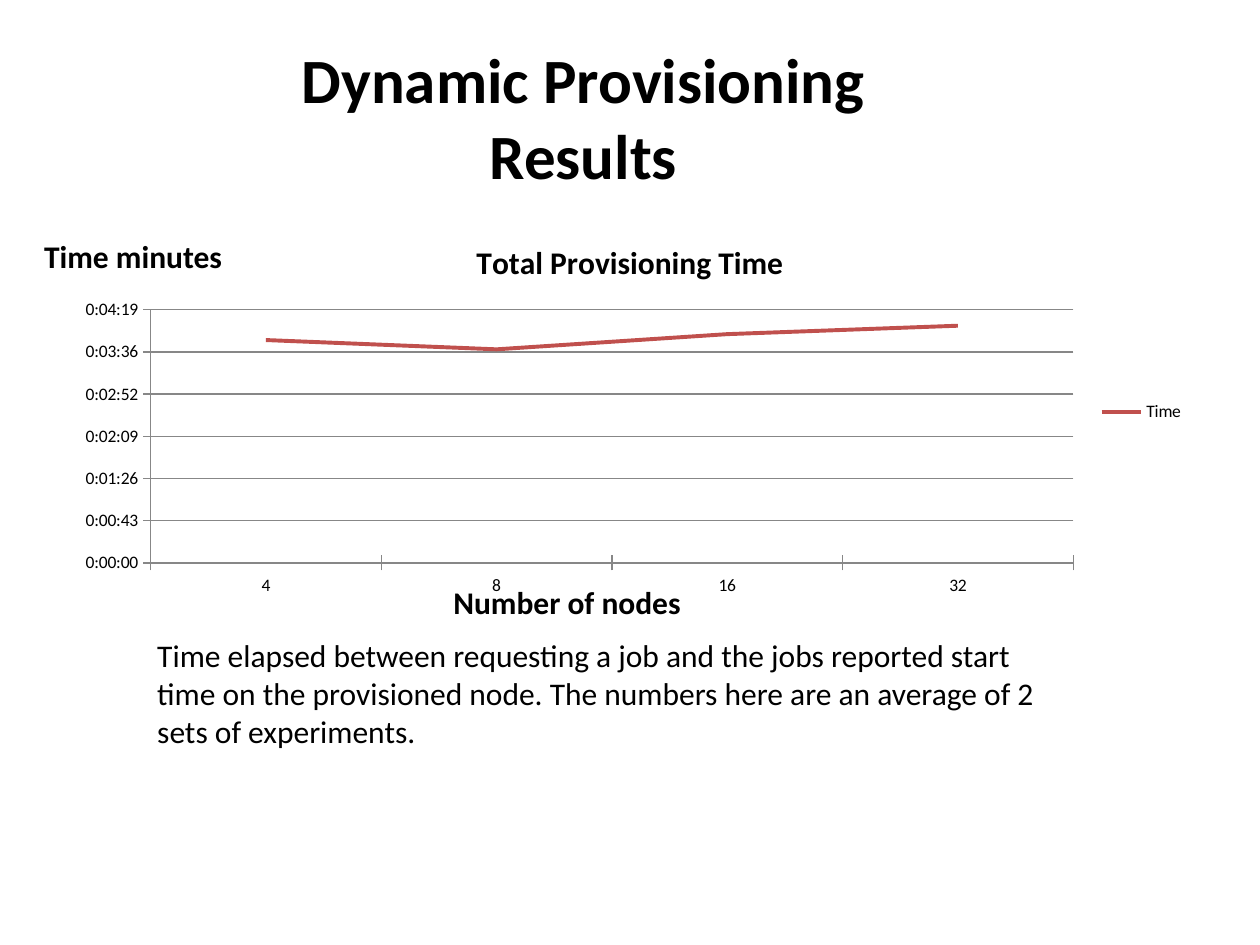
from pptx import Presentation
from pptx.chart.data import CategoryChartData
from pptx.dml.color import RGBColor
from pptx.enum.chart import XL_CHART_TYPE, XL_LEGEND_POSITION, XL_TICK_MARK
from pptx.enum.text import MSO_ANCHOR, MSO_AUTO_SIZE, PP_ALIGN
from pptx.util import Cm, Pt

LINE = XL_CHART_TYPE.LINE_STACKED
RIGHT = XL_LEGEND_POSITION.RIGHT
CROSS = XL_TICK_MARK.CROSS
MIDDLE = MSO_ANCHOR.MIDDLE
GROW = MSO_AUTO_SIZE.SHAPE_TO_FIT_TEXT
FIXED = MSO_AUTO_SIZE.NONE
CENTER = PP_ALIGN.CENTER

FONT = "Calibri"
BLACK = "000000"
GRAY = "878787"
RED = "C0504D"


def paint(color, value):
    color.rgb = RGBColor.from_string(value)


def style(font, size, bold=False):
    font.name = FONT
    font.size = Pt(size)
    font.bold = bold
    paint(font.color, BLACK)


def add_title(slide, text):
    title = slide.shapes.title
    title.left, title.top = Cm(4.24), Cm(0.76)
    title.width, title.height = Cm(15.04), Cm(3.18)
    frame = title.text_frame
    frame.text = text
    frame.word_wrap = True
    frame.auto_size = FIXED
    frame.vertical_anchor = MIDDLE
    par = frame.paragraphs[0]
    par.alignment = CENTER
    style(par.runs[0].font, 36, True)


def add_text(slide, text, left, top, width, height, label=False):
    """Add 18 pt text; a label is bold and stays on one line."""
    box = slide.shapes.add_textbox(Cm(left), Cm(top), Cm(width), Cm(height))
    frame = box.text_frame
    frame.text = text
    frame.word_wrap = not label
    frame.auto_size = GROW
    style(frame.paragraphs[0].runs[0].font, 18, label)


def format_axis(axis):
    axis.major_tick_mark = CROSS
    paint(axis.format.line.color, GRAY)
    axis.format.line.width = Pt(0.75)


def add_chart(slide):
    data = CategoryChartData(number_format="h:mm:ss")
    data.categories = ["4", "8", "16", "32"]
    data.add_series("Time", [0.00264, 0.00253, 0.00271, 0.00281])
    chart = slide.shapes.add_chart(
        LINE, Cm(1.27), Cm(4.45), Cm(22.86), Cm(7.7), data).chart
    style(chart.font, 10)

    chart.has_title = True
    frame = chart.chart_title.text_frame
    frame.text = "Total Provisioning Time"
    style(frame.paragraphs[0].runs[0].font, 18, True)

    chart.has_legend = True
    chart.legend.position = RIGHT
    chart.legend.include_in_layout = False

    times = chart.value_axis
    format_axis(chart.category_axis)
    format_axis(times)
    times.minimum_scale = 0
    times.has_major_gridlines = True
    grid = times.major_gridlines.format.line
    paint(grid.color, GRAY)
    grid.width = Pt(0.75)
    times.tick_labels.number_format = "h:mm:ss"
    times.tick_labels.number_format_is_linked = False

    plot = chart.plots[0]
    plot.vary_by_categories = False
    series = plot.series[0]
    series.smooth = False
    paint(series.format.line.color, RED)
    series.format.line.width = Pt(2.25)


def main():
    deck = Presentation()
    deck.slide_width, deck.slide_height = Cm(25.4), Cm(19.05)
    slide = deck.slides.add_slide(deck.slide_layouts[5])
    add_title(slide, "Dynamic Provisioning Results")
    add_chart(slide)
    add_text(slide, "Time elapsed between requesting a job and the jobs "
             "reported start time on the provisioned node. The numbers here "
             "are an average of 2 sets of experiments.",
             2.92, 12.7, 19, 2.57)
    add_text(slide, "Time minutes", 0.64, 4.65, 4.11, 1.02, label=True)
    add_text(slide, "Number of nodes", 8.89, 11.63, 5.13, 1.02, label=True)
    deck.save("out.pptx")


if __name__ == "__main__":
    main()
